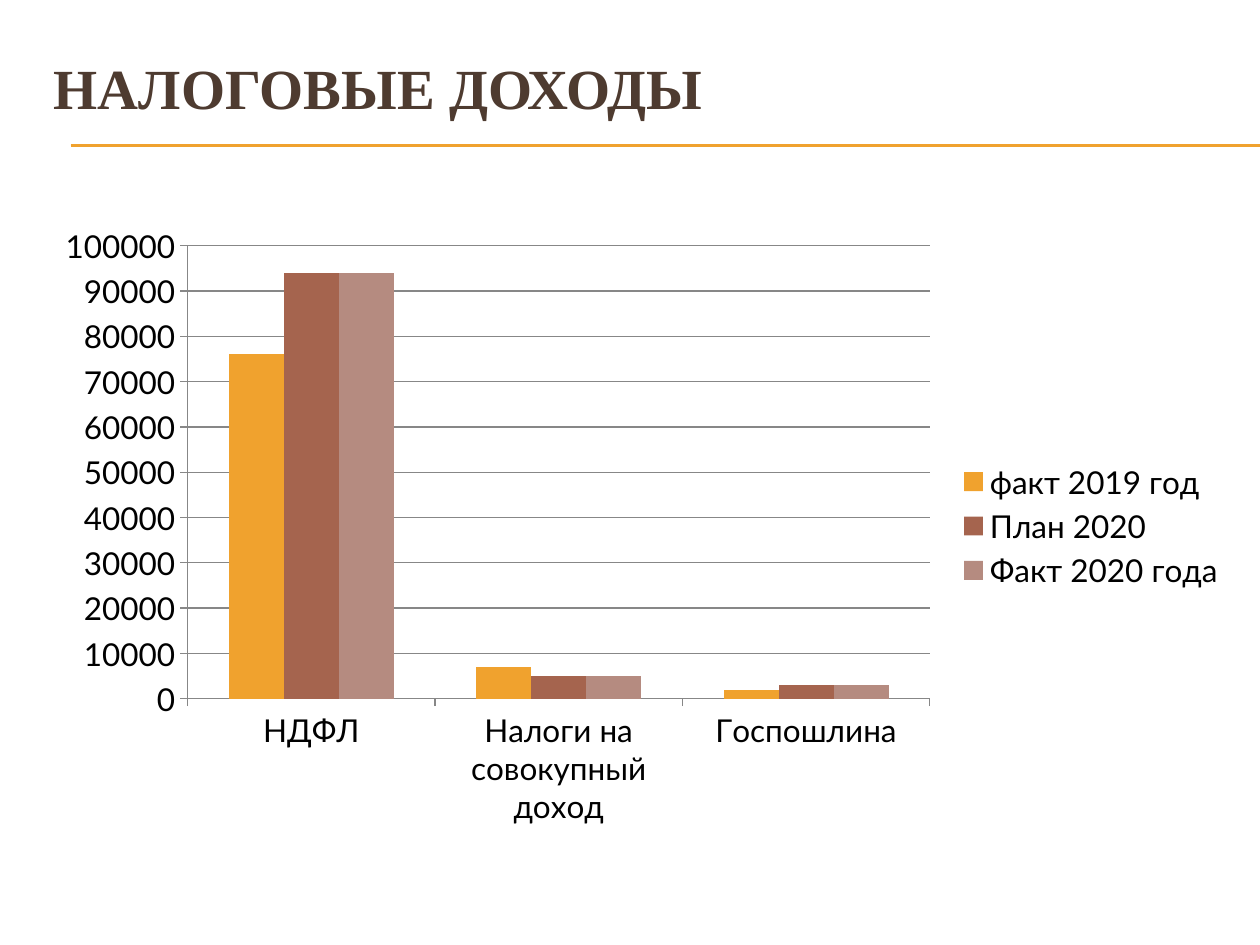
from lxml.etree import SubElement
from pptx import Presentation
from pptx.chart.data import CategoryChartData as ChartData
from pptx.dml.color import RGBColor
from pptx.enum.chart import XL_CHART_TYPE as ChartType, XL_LEGEND_POSITION as LegendPosition
from pptx.enum.chart import XL_TICK_MARK as TickMark
from pptx.enum.shapes import MSO_CONNECTOR as Connector
from pptx.enum.text import MSO_ANCHOR as Anchor
from pptx.oxml.ns import qn
from pptx.util import Inches, Pt

AMBER = RGBColor(0xF0, 0xA2, 0x2E)
RUST = RGBColor(0xA5, 0x64, 0x4E)
ROSE = RGBColor(0xB5, 0x8B, 0x80)
BROWN = RGBColor(0x4E, 0x3B, 0x30)
BLACK = RGBColor(0, 0, 0)
GRAY = RGBColor(0x87, 0x87, 0x87)

CATEGORIES = ("НДФЛ", "Налоги на совокупный доход", "Госпошлина")
SERIES = (
    ("факт 2019 год", (76000, 7000, 2000), AMBER),
    ("План 2020", (94000, 5000, 3000), RUST),
    ("Факт 2020 года", (94000, 5000, 3000), ROSE),
)


def apply_format(target, values):
    """Set every attribute named in values on the target."""
    for name, value in values.items():
        setattr(target, name, value)


def add_rule(page, top):
    """Draw a thin amber line running to the right edge."""
    rule = page.shapes.add_connector(
        Connector.STRAIGHT, Inches(0.56), Inches(top), Inches(10), Inches(top))
    rule.line.color.rgb = AMBER
    rule.line.width = Pt(0.75)
    SubElement(rule._element.spPr, qn("a:effectLst"))


def add_title(page, text):
    """Add the bold heading above the rules."""
    box = page.shapes.add_textbox(Inches(0.33), Inches(0.5), Inches(9.5), Inches(0.92))
    frame = box.text_frame
    apply_format(frame, {
        "word_wrap": True, "vertical_anchor": Anchor.MIDDLE,
        "margin_top": 0, "margin_bottom": Inches(0.55)})
    span = frame.paragraphs[0].add_run()
    span.text = text
    apply_format(span.font, {"name": "Times New Roman", "size": Pt(32.4), "bold": True})
    span.font.color.rgb = BROWN


def style_axes(chart):
    """Give both axes outward ticks and gray lines."""
    for axis in (chart.category_axis, chart.value_axis):
        apply_format(axis, {
            "major_tick_mark": TickMark.OUTSIDE, "minor_tick_mark": TickMark.NONE})
        axis.format.line.color.rgb = GRAY
    value_axis = chart.value_axis
    apply_format(value_axis, {
        "minimum_scale": 0, "maximum_scale": 100000, "major_unit": 10000,
        "has_major_gridlines": True})
    value_axis.major_gridlines.format.line.color.rgb = GRAY
    apply_format(value_axis.tick_labels, {
        "number_format": "General", "number_format_is_linked": False})


def add_tax_chart(page):
    """Add the clustered columns of tax revenue."""
    data = ChartData()
    data.categories = CATEGORIES
    for name, values, _ in SERIES:
        data.add_series(name, values)
    chart = page.shapes.add_chart(
        ChartType.COLUMN_CLUSTERED, Inches(0.33), Inches(1.7),
        Inches(9.5), Inches(4.95), data).chart
    apply_format(chart, {"has_title": False, "has_legend": True})
    apply_format(chart.font, {"name": "Lato", "size": Pt(18)})
    chart.font.color.rgb = BLACK
    apply_format(chart.legend, {
        "position": LegendPosition.RIGHT, "include_in_layout": False})
    plot = chart.plots[0]
    apply_format(plot, {"gap_width": 150, "overlap": 0, "vary_by_categories": False})
    for series, (_, _, color) in zip(plot.series, SERIES):
        series.format.fill.solid()
        series.format.fill.fore_color.rgb = color
    style_axes(chart)


def main():
    """Build the slide and save the deck."""
    deck = Presentation()
    apply_format(deck, {"slide_width": Inches(10), "slide_height": Inches(7.5)})
    page = deck.slides.add_slide(deck.slide_layouts[6])
    for top in (1.15, 1.16):
        add_rule(page, top)
    add_title(page, "НАЛОГОВЫЕ ДОХОДЫ")
    add_tax_chart(page)
    deck.save("out.pptx")


if __name__ == "__main__":
    main()
